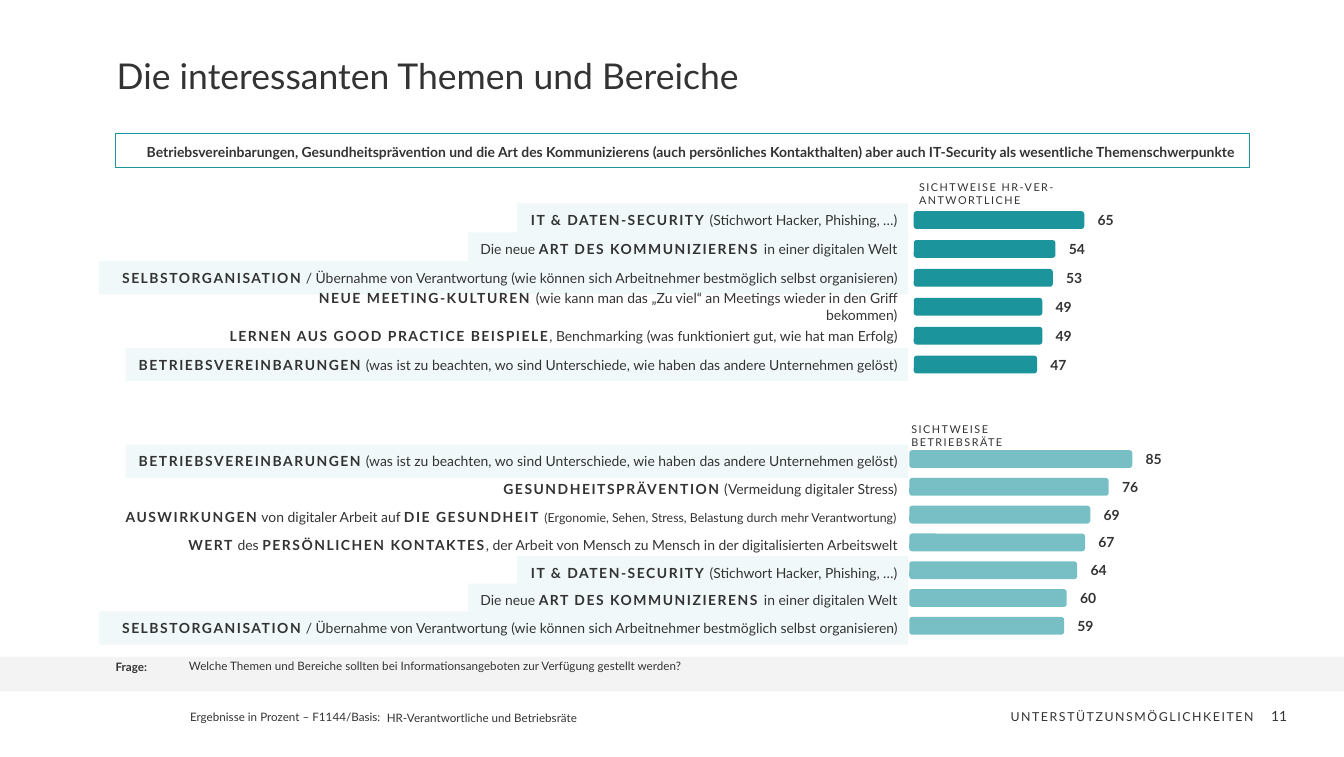
from dataclasses import dataclass

from pptx import Presentation
from pptx.dml.color import RGBColor
from pptx.enum.shapes import MSO_SHAPE as Preset
from pptx.enum.text import MSO_ANCHOR as Anchor, MSO_AUTO_SIZE as AutoSize, PP_ALIGN as Align
from pptx.shapes.autoshape import Shape
from pptx.slide import Slide
from pptx.text.text import _Paragraph as Paragraph
from pptx.util import Inches, Pt


@dataclass(frozen=True)
class Theme:
    font: str = "Lato"
    ink: str = "333333"
    teal: str = "1C949C"
    light_teal: str = "77BFC4"
    tint: str = "F1F8F9"
    grey: str = "F3F3F3"
    title: float = 23
    body: float = 9
    detail: float = 8
    small: float = 7.5
    caption: float = 7


@dataclass(frozen=True)
class Area:
    left: float
    top: float
    width: float
    height: float


@dataclass(frozen=True)
class Topic:
    label: str
    width: float
    tinted: bool = False
    detail: str = ""


@dataclass(frozen=True)
class Ranking:
    caption: str
    caption_area: Area
    color: str
    label_top: float
    label_step: float
    bar_left: float
    bar_top: float
    bar_step: float
    rows: tuple[tuple[Topic, int], ...]


THEME = Theme()
LABEL_RIGHT = 8.17
FULL_BAR = 2.36
BAR_HEIGHT = 0.16
VALUE_HEIGHT = 0.33
DEFAULT_INSETS = (0.1, 0.05, 0.1, 0.05)
LINE_INSETS = (0, 0, 0.1, 0.05)
NO_INSETS = (0, 0, 0, 0)

SECURITY = Topic("*IT & DATEN-SECURITY *(Stichwort Hacker, Phishing, …)", 3.52, True)
COMMUNICATION = Topic("Die neue *ART DES KOMMUNIZIERENS *in einer digitalen Welt", 3.96, True)
SELF_ORGANISATION = Topic(
    "*SELBSTORGANISATION* / Übernahme von Verantwortung "
    "(wie können sich Arbeitnehmer bestmöglich selbst organisieren)", 7.28, True)
MEETINGS = Topic(
    "*NEUE MEETING-KULTUREN *(wie kann man das „Zu viel“ an Meetings "
    "wieder in den Griff bekommen)", 6.07)
GOOD_PRACTICE = Topic(
    "*LERNEN AUS GOOD PRACTICE BEISPIELE*, Benchmarking "
    "(was funktioniert gut, wie hat man Erfolg)", 6.23)
AGREEMENTS = Topic(
    "*BETRIEBSVEREINBARUNGEN* (was ist zu beachten, wo sind Unterschiede, "
    "wie haben das andere Unternehmen gelöst)", 7.04, True)
PREVENTION = Topic("*GESUNDHEITSPRÄVENTION* (Vermeidung digitaler Stress)", 3.83)
HEALTH = Topic(
    "*AUSWIRKUNGEN* von digitaler Arbeit auf *DIE GESUNDHEIT *", 7.2,
    detail="(Ergonomie, Sehen, Stress, Belastung durch mehr Verantwortung)")
CONTACT = Topic(
    "*WERT* des *PERSÖNLICHEN KONTAKTES*, der Arbeit von Mensch zu Mensch "
    "in der digitalisierten Arbeitswelt", 6.61)

RANKINGS = (
    Ranking(
        "SICHTWEISE HR-VER-\nANTWORTLICHE", Area(8.17, 1.58, 2.97, 0.34), THEME.teal,
        1.83, 0.26, 8.22, 1.9, 0.26,
        ((SECURITY, 65), (COMMUNICATION, 54), (SELF_ORGANISATION, 53),
         (MEETINGS, 49), (GOOD_PRACTICE, 49), (AGREEMENTS, 47))),
    Ranking(
        "SICHTWEISE\nBETRIEBSRÄTE", Area(8.1, 3.75, 1.85, 0.34), THEME.light_teal,
        4, 0.25, 8.18, 4.05, 0.25,
        ((AGREEMENTS, 85), (PREVENTION, 76), (HEALTH, 69), (CONTACT, 67),
         (SECURITY, 64), (COMMUNICATION, 60), (SELF_ORGANISATION, 59))),
)


def add_block(page: Slide, area: Area, *, preset: Preset = Preset.RECTANGLE,
              fill: str = "", line: str = "") -> Shape:
    block = page.shapes.add_shape(
        preset, Inches(area.left), Inches(area.top), Inches(area.width), Inches(area.height))
    block.shadow.inherit = False
    if fill:
        block.fill.solid()
        block.fill.fore_color.rgb = RGBColor.from_string(fill)
    else:
        block.fill.background()
    if line:
        block.line.color.rgb = RGBColor.from_string(line)
        block.line.width = Pt(0.75)
    else:
        block.line.fill.background()
    return block


def add_box(page: Slide, area: Area) -> Shape:
    return page.shapes.add_textbox(
        Inches(area.left), Inches(area.top), Inches(area.width), Inches(area.height))


def add_span(para: Paragraph, text: str, size: float, bold: bool, tracking: float) -> None:
    span = para.add_run()
    span.text = text
    span.font.name = THEME.font
    span.font.size = Pt(size)
    span.font.bold = bold
    span.font.color.rgb = RGBColor.from_string(THEME.ink)
    if tracking:
        span._r.get_or_add_rPr().set("spc", str(round(tracking * 100)))


def write(box: Shape, text: str, *, size: float = THEME.body, bold: bool = False,
          tracking: float = 0, align: Align = Align.LEFT, anchor: Anchor = Anchor.TOP,
          insets: tuple[float, ...] = DEFAULT_INSETS, wrap: bool = True,
          grow: bool = False, leading: Pt | float | None = None, detail: str = "") -> None:
    frame = box.text_frame
    frame.word_wrap = wrap
    frame.auto_size = AutoSize.SHAPE_TO_FIT_TEXT if grow else AutoSize.NONE
    frame.vertical_anchor = anchor
    frame.margin_left, frame.margin_top, frame.margin_right, frame.margin_bottom = map(Inches, insets)
    for number, line in enumerate(text.split("\n")):
        para = frame.add_paragraph() if number else frame.paragraphs[0]
        para.alignment = align
        para.line_spacing = leading
        for position, part in enumerate(line.split("*")):
            strong = position % 2 == 1
            if part:
                add_span(para, part, size, bold or strong, 1 if strong else tracking)
        if detail:
            add_span(para, detail, THEME.detail, False, 0)


def draw_ranking(page: Slide, ranking: Ranking) -> None:
    label_height = 0.3
    steps = len(ranking.rows)
    for row, (topic, value) in enumerate(ranking.rows):
        label_area = Area(LABEL_RIGHT - topic.width, ranking.label_top + row * ranking.label_step,
                          topic.width, label_height)
        label = add_block(page, label_area, fill=THEME.tint) if topic.tinted else add_box(page, label_area)
        write(label, topic.label, detail=topic.detail, align=Align.RIGHT,
              anchor=Anchor.MIDDLE, wrap=False, grow=True)
    for row in range(steps):
        value = ranking.rows[row][1]
        top = ranking.bar_top + row * ranking.bar_step
        length = FULL_BAR * value / 100
        add_block(page, Area(ranking.bar_left, top, length, BAR_HEIGHT),
                  preset=Preset.ROUNDED_RECTANGLE, fill=ranking.color)
        value_area = Area(ranking.bar_left + length, top - (VALUE_HEIGHT - BAR_HEIGHT) / 2,
                          0.64, VALUE_HEIGHT)
        write(add_box(page, value_area), str(value), bold=True, anchor=Anchor.MIDDLE,
              insets=(0.12, 0.05, 0.1, 0.05))
    write(add_box(page, ranking.caption_area), ranking.caption,
          size=THEME.caption, tracking=1, grow=True)


def draw_frame(page: Slide) -> None:
    add_block(page, Area(0, 5.91, 12.09, 0.31), fill=THEME.grey)
    add_block(page, Area(1.04, 1.2, 10.2, 0.31), line=THEME.teal)
    write(add_box(page, Area(1.05, 0.52, 8.43, 0.4)), "Die interessanten Themen und Bereiche",
          size=THEME.title, insets=LINE_INSETS, leading=Pt(25.3))
    write(add_box(page, Area(1.32, 1.21, 9.92, 0.31)),
          "Betriebsvereinbarungen, Gesundheitsprävention und die Art des Kommunizierens "
          "(auch persönliches Kontakthalten) aber auch IT-Security als wesentliche "
          "Themenschwerpunkte", bold=True, anchor=Anchor.MIDDLE, insets=NO_INSETS)
    write(add_box(page, Area(1.04, 5.94, 0.4, 0.18)), "Frage:", size=THEME.small, bold=True,
          insets=LINE_INSETS, wrap=False, grow=True)
    write(add_box(page, Area(1.7, 5.93, 9.54, 0.28)),
          "Welche Themen und Bereiche sollten bei Informationsangeboten zur Verfügung "
          "gestellt werden?", size=THEME.small, insets=LINE_INSETS)
    write(add_box(page, Area(1.71, 6.39, 1.74, 0.13)), "Ergebnisse in Prozent – F1144/Basis:",
          size=THEME.small, insets=NO_INSETS, wrap=False, grow=True)
    write(add_box(page, Area(3.48, 6.34, 3.94, 0.23)), "HR-Verantwortliche und Betriebsräte",
          size=THEME.small, anchor=Anchor.MIDDLE, insets=NO_INSETS)
    write(add_box(page, Area(8.92, 6.35, 2.46, 0.23)), "UNTERSTÜTZUNSMÖGLICHKEITEN",
          size=THEME.detail, tracking=1, align=Align.RIGHT, leading=0.9)
    write(add_box(page, Area(11.23, 6.32, 0.35, 0.2)), "11", align=Align.RIGHT,
          insets=(0.1, 0.05, 0, 0), wrap=False, grow=True)


def main() -> None:
    deck = Presentation()
    deck.slide_width, deck.slide_height = Inches(12.09), Inches(6.81)
    page = deck.slides.add_slide(deck.slide_layouts[6])
    draw_frame(page)
    for ranking in RANKINGS:
        draw_ranking(page, ranking)
    deck.save("out.pptx")


if __name__ == "__main__":
    main()
